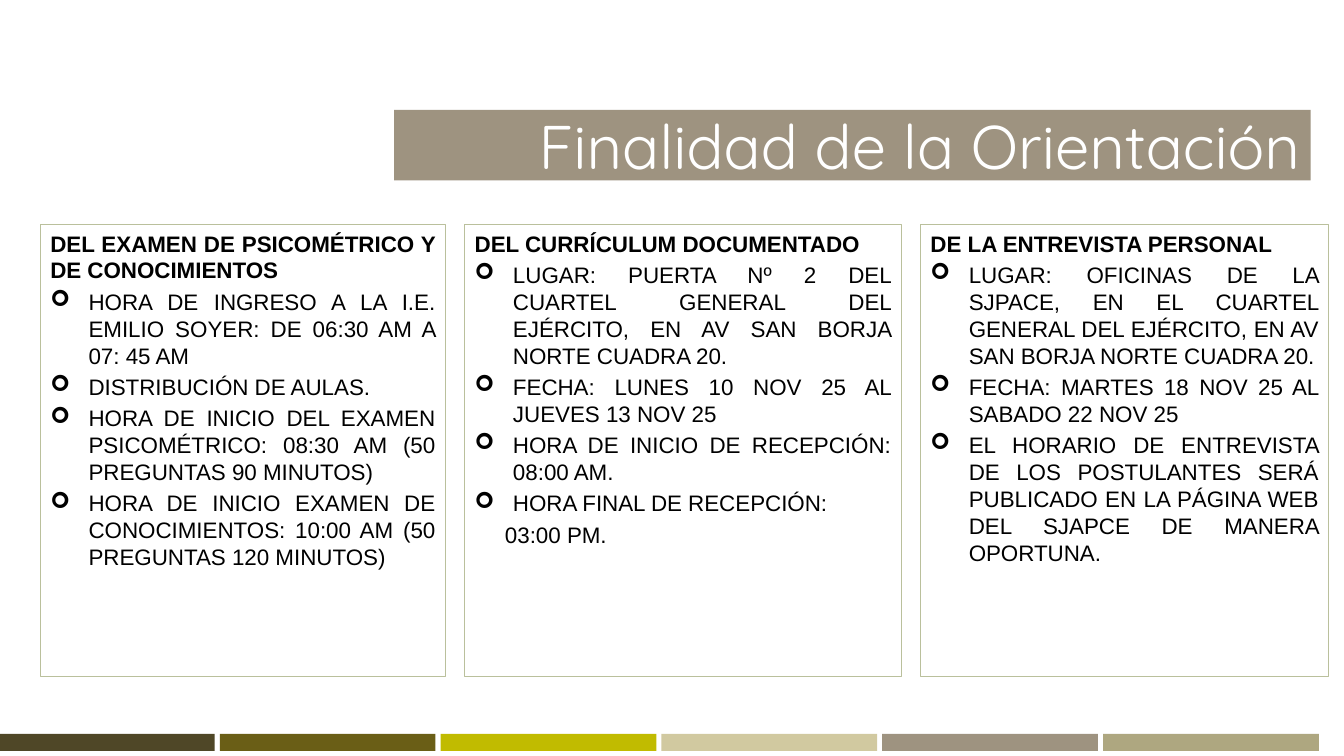
from lxml import etree
from pptx import Presentation
from pptx.dml.color import RGBColor
from pptx.enum.shapes import MSO_SHAPE
from pptx.enum.text import MSO_ANCHOR, PP_ALIGN
from pptx.oxml.ns import qn
from pptx.util import Inches, Pt

RECT = MSO_SHAPE.RECTANGLE
TOP, MIDDLE = MSO_ANCHOR.TOP, MSO_ANCHOR.MIDDLE
RIGHT, JUSTIFY = PP_ALIGN.RIGHT, PP_ALIGN.JUSTIFY

BAR_COLORS = ["4F4727", "6A5E16", "C1BB00", "D1C9A0", "9E9380", "AEA780"]
BULLET_INDENT = 0.38
CONTINUATION_INDENT = 0.3

# Left, width, heading, bulleted items, unbulleted closing line
PANELS = [
    (0.4, 4.02, "DEL EXAMEN DE PSICOMÉTRICO Y DE CONOCIMIENTOS", [
        "HORA DE INGRESO A LA I.E. EMILIO SOYER: DE 06:30 AM A 07: 45 AM",
        "DISTRIBUCIÓN DE AULAS.",
        "HORA DE INICIO DEL EXAMEN PSICOMÉTRICO: 08:30 AM (50 PREGUNTAS 90 MINUTOS)",
        "HORA DE INICIO EXAMEN DE CONOCIMIENTOS: 10:00 AM (50 PREGUNTAS 120 MINUTOS)",
    ], None),
    (4.61, 4.33, "DEL CURRÍCULUM DOCUMENTADO", [
        "LUGAR: PUERTA Nº 2 DEL CUARTEL GENERAL DEL EJÉRCITO, EN AV SAN BORJA NORTE CUADRA 20.",
        "FECHA: LUNES 10 NOV 25 AL JUEVES 13 NOV 25",
        "HORA DE INICIO DE RECEPCIÓN: 08:00 AM.",
        "HORA FINAL DE RECEPCIÓN:",
    ], "03:00 PM."),
    (9.13, 4.05, "DE LA ENTREVISTA PERSONAL", [
        "LUGAR: OFICINAS DE LA SJPACE, EN EL CUARTEL GENERAL DEL EJÉRCITO, EN AV SAN BORJA NORTE CUADRA 20.",
        "FECHA: MARTES 18 NOV 25 AL SABADO 22 NOV 25",
        "EL HORARIO DE ENTREVISTA DE LOS POSTULANTES SERÁ PUBLICADO EN LA PÁGINA WEB DEL SJAPCE DE MANERA OPORTUNA.",
    ], None),
]


def rgb(color):
    return RGBColor.from_string(color)


def add_rect(s, left, top, width, height, fill=None, line=None):
    sp = s.shapes.add_shape(RECT, Inches(left), Inches(top), Inches(width), Inches(height))
    sp.shadow.inherit = False
    if fill:
        sp.fill.solid()
        sp.fill.fore_color.rgb = rgb(fill)
    else:
        sp.fill.background()
    if line:
        sp.line.color.rgb = rgb(line)
        sp.line.width = Pt(0.75)
    else:
        sp.line.fill.background()
    return sp


def style_paragraph(p, name, size, color, align, bold=False):
    p.alignment = align
    for r in p.runs:
        r.font.name = name
        r.font.size = Pt(size)
        r.font.bold = bold
        r.font.color.rgb = rgb(color)


def indent_paragraph(p, left, bullet=None):
    """Indent a paragraph, hanging its first line when it has a bullet."""
    pPr = p._p.get_or_add_pPr()
    pPr.set("marL", str(Inches(left)))
    if bullet:
        pPr.set("indent", str(-Inches(left)))
        etree.SubElement(pPr, qn("a:buFont"), typeface="Wingdings")
        etree.SubElement(pPr, qn("a:buChar"), char=bullet)


def add_title(s, text):
    sp = add_rect(s, 3.91, 1.09, 9.09, 0.7, fill="9E9380")
    tf = sp.text_frame
    tf.text = text
    tf.vertical_anchor = MIDDLE
    style_paragraph(tf.paragraphs[0], "Quicksand", 44, "FFFFFF", RIGHT)


def add_panel(s, left, width, heading, items, closing):
    tf = add_rect(s, left, 2.23, width, 4.48, line="BAC09C").text_frame
    tf.word_wrap = True
    tf.vertical_anchor = TOP
    tf.text = heading
    style_paragraph(tf.paragraphs[0], "Arial", 16, "000000", JUSTIFY, bold=True)

    lines = [(item, BULLET_INDENT, "➢") for item in items]
    if closing:
        lines.append((closing, CONTINUATION_INDENT, None))
    for text, indent, bullet in lines:
        p = tf.add_paragraph()
        p.text = text
        p.space_before = Pt(3.2)
        indent_paragraph(p, indent, bullet)
        style_paragraph(p, "Arial", 16, "000000", JUSTIFY)


def add_footer_bars(s):
    for i, color in enumerate(BAR_COLORS):
        add_rect(s, -0.01 + i * 2.19, 7.28, 2.14, 0.17, fill=color)


def main():
    prs = Presentation()
    prs.slide_width, prs.slide_height = Inches(13.33), Inches(7.5)
    s = prs.slides.add_slide(prs.slide_layouts[6])
    add_title(s, "Finalidad de la Orientación")
    add_footer_bars(s)
    for panel in PANELS:
        add_panel(s, *panel)
    prs.save("out.pptx")


if __name__ == "__main__":
    main()
